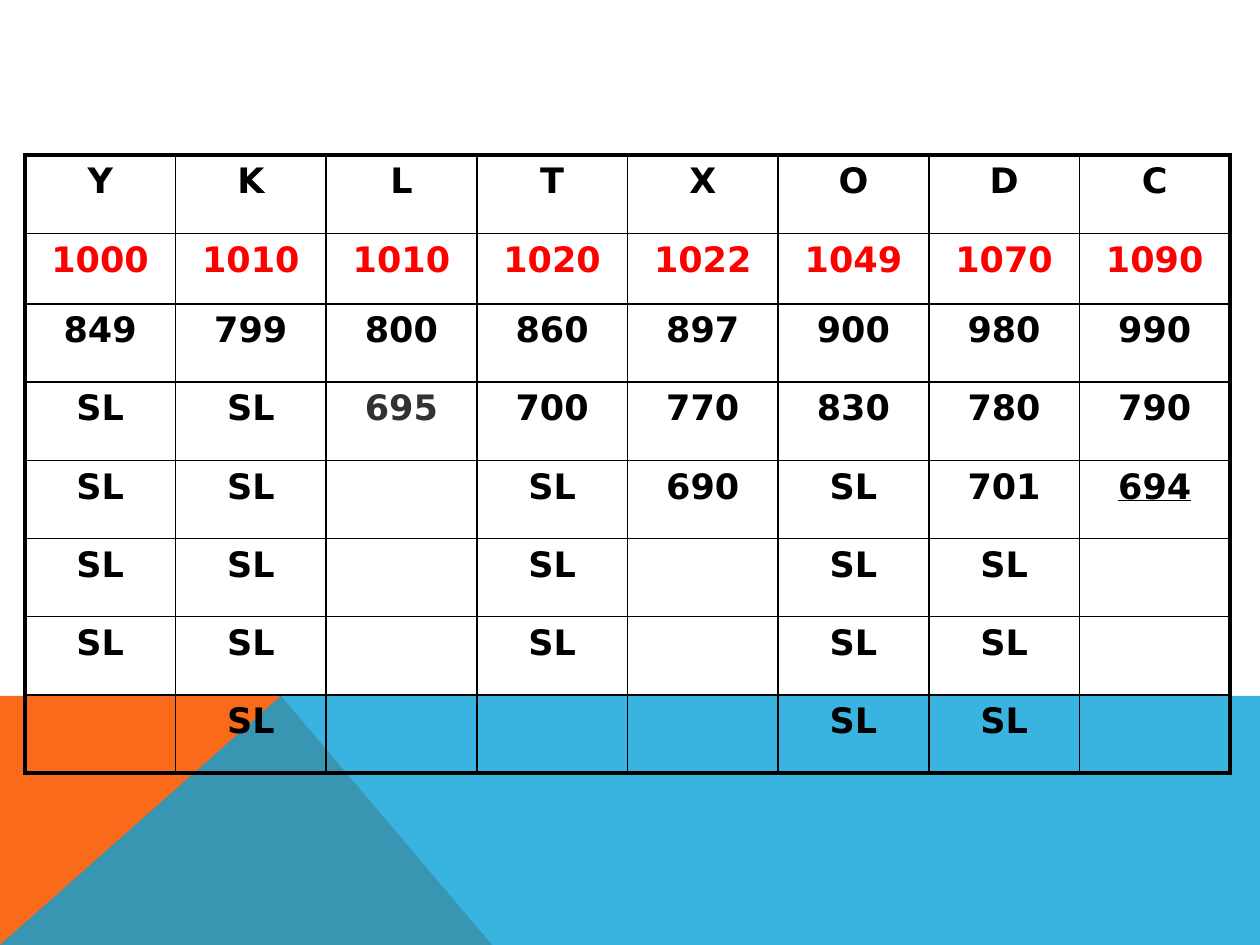
from typing import NamedTuple

from lxml import etree
from pptx import Presentation
from pptx import util as u
from pptx.dml import color
from pptx.enum import text
from pptx.oxml import ns

FONT = "DejaVu Sans"
BLACK, RED, GREY = "000000", "FF0000", "323232"
THIN, THICK = 1, 2.25
WIDE, HIGH = 720, 540
PEAK, TOP = 160.6, 397.7

ROWS = [
    ["Y", "K", "L", "T", "X", "O", "D", "C"],
    ["1000", "1010", "1010", "1020", "1022", "1049", "1070", "1090"],
    ["849", "799", "800", "860", "897", "900", "980", "990"],
    ["SL", "SL", "695", "700", "770", "830", "780", "790"],
    ["SL", "SL", "", "SL", "690", "SL", "701", "694"],
    ["SL", "SL", "", "SL", "", "SL", "SL", ""],
    ["SL", "SL", "", "SL", "", "SL", "SL", ""],
    ["", "SL", "", "", "", "SL", "SL", ""],
]


class Panel(NamedTuple):
    points: list[tuple[float, float]]
    fill: str
    alpha: int = 100


PANELS = [
    Panel([(0, HIGH), (0, TOP), (PEAK, TOP), (281.2, HIGH)], "F96A1B"),
    Panel([(0, HIGH), (PEAK, TOP), (WIDE, TOP), (WIDE, HIGH)], "08A1D9", 80),
]


def rgb(code: str) -> color.RGBColor:
    return color.RGBColor.from_string(code)


def add(parent, tag: str, **attrs):
    return etree.SubElement(parent, ns.qn(tag), attrs)


def draw_panel(slide, panel: Panel) -> None:
    first, *rest = [(u.Pt(x), u.Pt(y)) for x, y in panel.points]
    path = slide.shapes.build_freeform(*first, scale=1.0)
    path.add_line_segments(rest, close=True)
    shape = path.convert_to_shape()
    shape.shadow.inherit = False
    shape.line.fill.background()
    shape.fill.solid()
    shape.fill.fore_color.rgb = rgb(panel.fill)
    if panel.alpha < 100:
        tint = shape.fill._xPr.find(".//" + ns.qn("a:srgbClr"))
        add(tint, "a:alpha", val=str(panel.alpha * 1000))


def write(cell, words: str, *, size: float = 20, ink: str = BLACK,
          bold: bool = True, under: bool = False) -> None:
    para = cell.text_frame.paragraphs[0]
    para.alignment = text.PP_ALIGN.CENTER
    gap = add(para._p.get_or_add_pPr(), "a:spcBef")
    add(gap, "a:spcPct", val="20000")
    run = para.add_run()
    run.text = words
    font = run.font
    font.name, font.size, font.bold = FONT, u.Pt(size), bold
    font.underline = under
    font.color.rgb = rgb(ink)


def edge(cell, sides: dict[str, float]) -> None:
    props = cell._tc.get_or_add_tcPr()
    for spot, (side, width) in enumerate(sides.items()):
        line = add(props, f"a:ln{side}", w=str(u.Pt(width)))
        add(add(line, "a:solidFill"), "a:srgbClr", val=BLACK)
        props.insert(spot, line)


def draw_table(slide, left: float, top: float, width: float,
               tall: float, short: float) -> None:
    count, across = len(ROWS), len(ROWS[0])
    frame = slide.shapes.add_table(count, across, u.Pt(left), u.Pt(top),
                                   u.Pt(width), u.Pt(tall * count))
    table = frame.table
    table.first_row = table.horz_banding = False
    for col in table.columns:
        col.width = u.Pt(width / across)
    for r, row in enumerate(ROWS):
        table.rows[r].height = u.Pt(short if r == 1 else tall)
        for c, words in enumerate(row):
            cell = table.cell(r, c)
            cell.fill.background()
            edge(cell, {
                "L": THICK if c == 0 else THIN,
                "R": THICK if c == across - 1 else THIN,
                "T": THICK if r == 0 else THIN,
                "B": THICK if r == count - 1 else THIN,
            })
            if words:
                ink = RED if r == 1 else GREY if words == "695" else BLACK
                write(cell, words, ink=ink, under=words == "694")


def main() -> None:
    deck = Presentation()
    deck.slide_width, deck.slide_height = u.Pt(WIDE), u.Pt(HIGH)
    slide = deck.slides.add_slide(deck.slide_layouts[6])
    for panel in PANELS:
        draw_panel(slide, panel)
    draw_table(slide, left=14.2, top=88.6, width=688.8, tall=44.68, short=40.4)
    deck.save("out.pptx")


if __name__ == "__main__":
    main()
